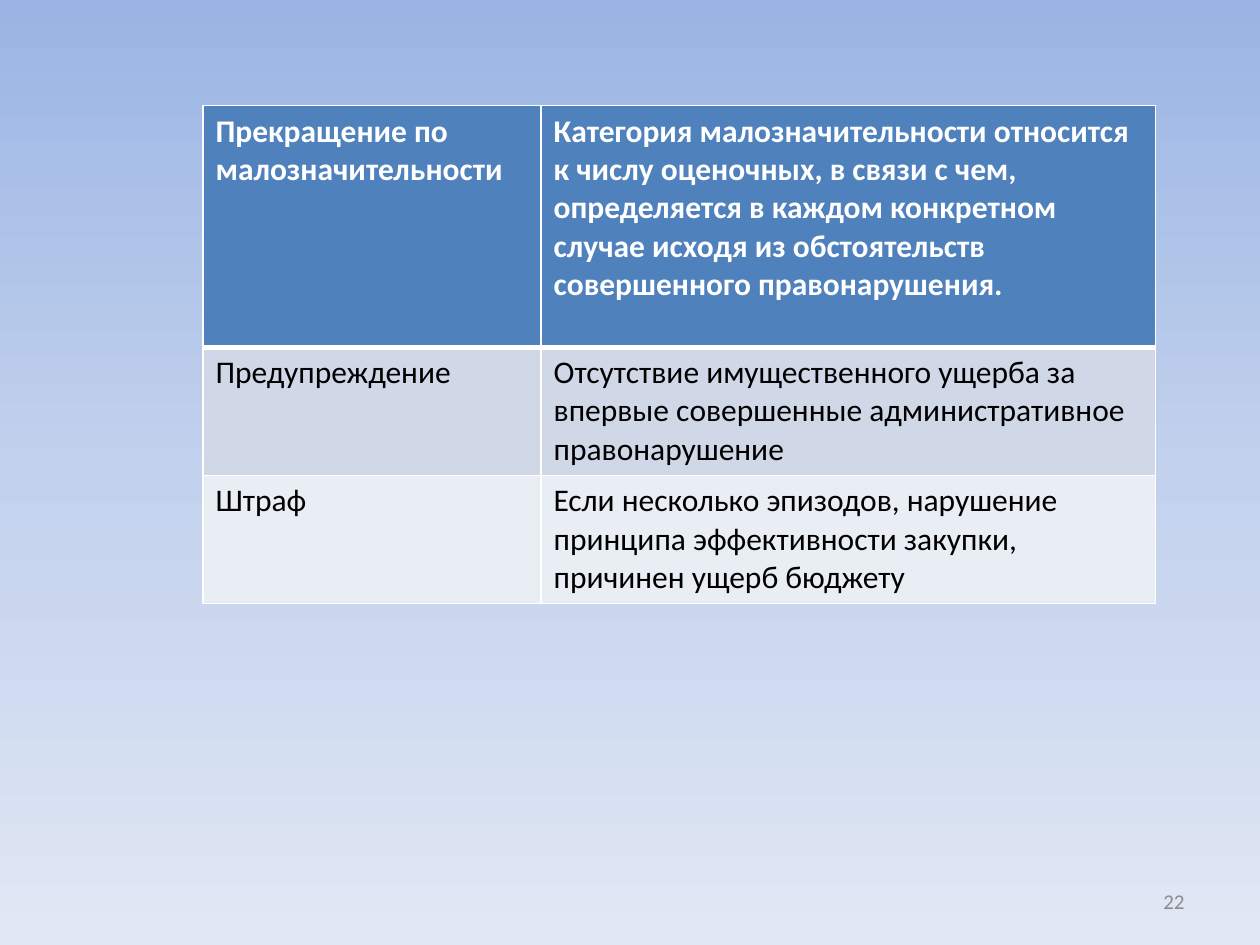
from copy import deepcopy

from pptx import Presentation
from pptx.dml.color import RGBColor
from pptx.enum.text import MSO_ANCHOR, PP_ALIGN
from pptx.oxml.ns import qn
from pptx.util import Pt
from lxml import etree

RIGHT = PP_ALIGN.RIGHT
MIDDLE = MSO_ANCHOR.MIDDLE
FONT = "Calibri"
BACKGROUND_STOPS = [(0, "9AB5E4"), (0.5, "C2D1ED"), (1, "E1E8F5")]
COLUMN_SHARES = [0.355, 0.645]
ROW_HEIGHTS = [138, 73.2, 73.2]
ROW_FILLS = ["4F81BD", "D0D8E8", "E9EDF4"]
MEASURES = [
    ("Прекращение по малозначительности",
     "Категория малозначительности относится к числу оценочных, в связи с чем, "
     "определяется в каждом конкретном случае исходя из обстоятельств "
     "совершенного правонарушения."),
    ("Предупреждение",
     "Отсутствие имущественного ущерба за впервые совершенные "
     "административное правонарушение"),
    ("Штраф",
     "Если несколько эпизодов, нарушение принципа эффективности закупки, "
     "причинен ущерб бюджету"),
]


def color(hex_string):
    return RGBColor.from_string(hex_string)


def format_text(text_frame, size, hex_color, bold=False):
    for paragraph in text_frame.paragraphs:
        for run in paragraph.runs:
            run.font.name = FONT
            run.font.size = Pt(size)
            run.font.bold = bold
            run.font.color.rgb = color(hex_color)


def fill_background(slide):
    fill = slide.background.fill
    fill.gradient()
    fill.gradient_angle = 270
    stop_list = next(slide.element.iter(qn("a:gsLst")))
    stop_list.append(deepcopy(stop_list[-1]))
    for stop, (position, hex_color) in zip(fill.gradient_stops, BACKGROUND_STOPS):
        stop.position = position
        stop.color.rgb = color(hex_color)


def add_borders(cell, widths):
    """Draw white borders; widths maps the sides L, R, T, B, in that order, to points."""
    properties = cell._tc.get_or_add_tcPr()
    for side, width in widths.items():
        line = etree.SubElement(properties, qn(f"a:ln{side}"), w=str(Pt(width)))
        fill = etree.SubElement(line, qn("a:solidFill"))
        etree.SubElement(fill, qn("a:srgbClr"), val="FFFFFF")


def add_measures_table(slide, left, top, width):
    frame = slide.shapes.add_table(
        len(MEASURES), len(COLUMN_SHARES),
        Pt(left), Pt(top), Pt(width), Pt(sum(ROW_HEIGHTS)))
    table = frame.table
    for column, share in zip(table.columns, COLUMN_SHARES):
        column.width = Pt(width * share)
    for row_index, texts in enumerate(MEASURES):
        is_header = row_index == 0
        table.rows[row_index].height = Pt(ROW_HEIGHTS[row_index])
        widths = {"L": 1, "R": 1,
                  "T": 3 if row_index == 1 else 1,
                  "B": 3 if is_header else 1}
        for column_index, text in enumerate(texts):
            cell = table.cell(row_index, column_index)
            cell.text_frame.text = text
            format_text(cell.text_frame, 18,
                        "FFFFFF" if is_header else "000000", is_header)
            add_borders(cell, widths)
            cell.fill.solid()
            cell.fill.fore_color.rgb = color(ROW_FILLS[row_index])


def add_slide_number(slide, left, top, width, height):
    text_box = slide.shapes.add_textbox(Pt(left), Pt(top), Pt(width), Pt(height))
    text_frame = text_box.text_frame
    text_frame.word_wrap = True
    text_frame.vertical_anchor = MIDDLE
    text_frame.text = "22"
    text_frame.paragraphs[0].alignment = RIGHT
    format_text(text_frame, 12, "8C8C8C")


def main():
    presentation = Presentation()
    presentation.slide_width = Pt(720)
    presentation.slide_height = Pt(540)
    slide = presentation.slides.add_slide(presentation.slide_layouts[6])
    fill_background(slide)
    add_measures_table(slide, 116, 60.4, 544.3)
    add_slide_number(slide, 516, 500.5, 168, 28.75)
    presentation.save("out.pptx")


if __name__ == "__main__":
    main()
